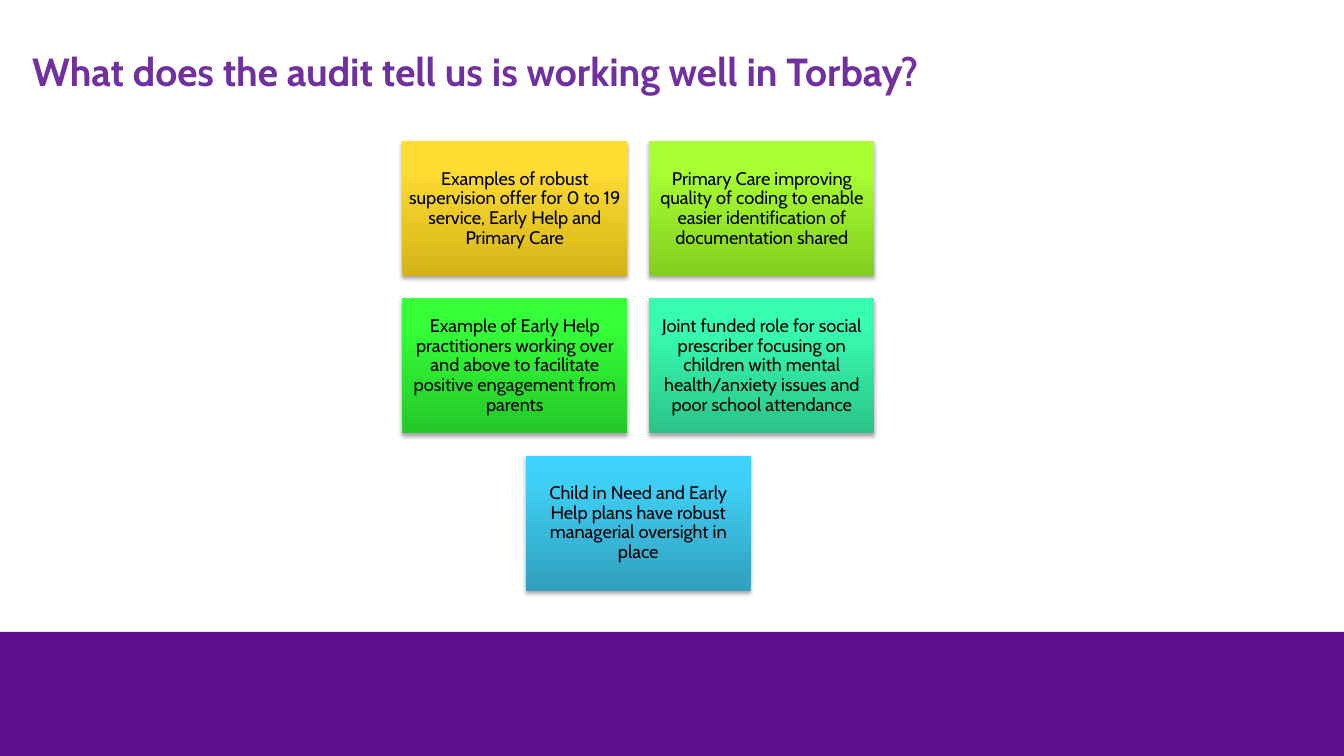
from copy import deepcopy

from lxml import etree
from pptx import Presentation
from pptx.dml.color import RGBColor
from pptx.enum.shapes import MSO_SHAPE
from pptx.enum.text import MSO_ANCHOR, PP_ALIGN
from pptx.oxml.ns import qn
from pptx.util import Inches, Pt

RECT = MSO_SHAPE.RECTANGLE
MIDDLE = MSO_ANCHOR.MIDDLE
LEFT, CENTER = PP_ALIGN.LEFT, PP_ALIGN.CENTER

THEME = {
    "band": "5E0D8B",
    "title": {"name": "Cabin", "size": Pt(28), "bold": True, "color": "7030A0"},
    "card": {"name": "Cabin", "size": Pt(13), "bold": False, "color": "000000"},
}

# Column, row, gradient from bottom to top, text
CARDS = [
    (0, 0, ("D3B318", "FFDC32", "FFDC34"),
     "Examples of robust supervision offer for 0 to 19 service, Early Help and Primary Care"),
    (1, 0, ("83CE1E", "A8FF33", "A9FF35"),
     "Primary Care improving quality of coding to enable easier identification of documentation shared"),
    (0, 1, ("24C828", "34FF38", "36FF3A"),
     "Example of Early Help practitioners working over and above to facilitate positive engagement from parents"),
    (1, 1, ("2BC389", "37FDB1", "37FFB2"),
     "Joint funded role for social prescriber focusing on children with mental health/anxiety issues and poor school attendance"),
    (0.5, 2, ("319FBD", "3FCFF6", "3CD2FB"),
     "Child in Need and Early Help plans have robust managerial oversight in place"),
]
STOPS = (0, 0.8, 1)
CARD_W, CARD_H, GAP = 2.23, 1.34, 0.22
GRID_X, GRID_Y = 3.99, 1.4


def write(shape, text, style, align, inset):
    frame = shape.text_frame
    margins = {f"margin_{side}": Inches(inset[i % 2])
               for i, side in enumerate(("left", "top", "right", "bottom"))}
    for key, value in {"word_wrap": True, "vertical_anchor": MIDDLE, **margins}.items():
        setattr(frame, key, value)
    para = frame.paragraphs[0]
    para.alignment, para.line_spacing = align, 0.9
    run = para.add_run()
    run.text = text
    for key in ("name", "size", "bold"):
        setattr(run.font, key, style[key])
    run.font.color.rgb = RGBColor.from_string(style["color"])


def add_shadow(shape):
    shape.shadow.inherit = False
    effects = shape._element.spPr.find(qn("a:effectLst"))
    shade = etree.SubElement(effects, qn("a:outerShdw"), blurRad=str(Pt(3.1)),
                             dist=str(Pt(1.8)), dir="5400000", rotWithShape="0")
    tone = etree.SubElement(shade, qn("a:srgbClr"), val="000000")
    etree.SubElement(tone, qn("a:alpha"), val="35000")


deck = Presentation()
deck.slide_width, deck.slide_height = Inches(13.33), Inches(7.5)
slide = deck.slides.add_slide(deck.slide_layouts[6])

# Bottom band
band = slide.shapes.add_shape(RECT, 0, Inches(6.27), deck.slide_width, Inches(1.23))
band.shadow.inherit = False
band.fill.solid()
band.fill.fore_color.rgb = RGBColor.from_string(THEME["band"])
band.line.fill.background()

# Title
title = slide.shapes.add_textbox(Inches(0.22), Inches(0.01), Inches(12.89), Inches(1.45))
write(title, "What does the audit tell us is working well in Torbay?",
      THEME["title"], LEFT, (0.1, 0.05))

# Cards, the last one centred below the two columns
for col, row, tones, text in CARDS:
    card = slide.shapes.add_shape(
        RECT, Inches(GRID_X + col * (CARD_W + GAP)), Inches(GRID_Y + row * (CARD_H + GAP)),
        Inches(CARD_W), Inches(CARD_H))
    card.line.fill.background()
    card.fill.gradient()
    card.fill.gradient_angle = 90
    stops = card._element.spPr.find(".//" + qn("a:gsLst"))
    stops.append(deepcopy(stops[0]))
    for stop, place, tone in zip(card.fill.gradient_stops, STOPS, tones):
        stop.position = place
        stop.color.rgb = RGBColor.from_string(tone)
    add_shadow(card)
    write(card, text, THEME["card"], CENTER, (0.05, 0.05))

deck.save("out.pptx")
